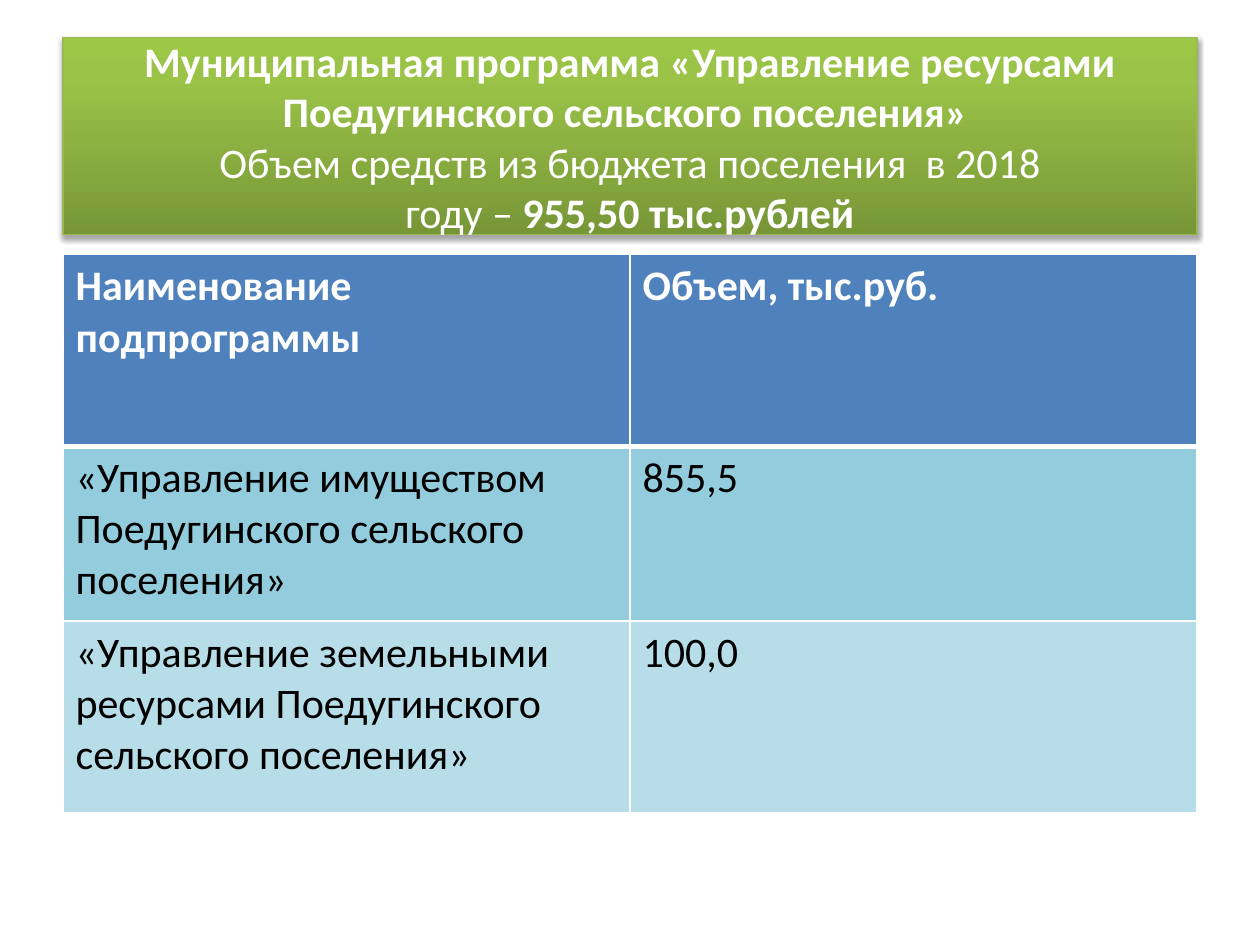
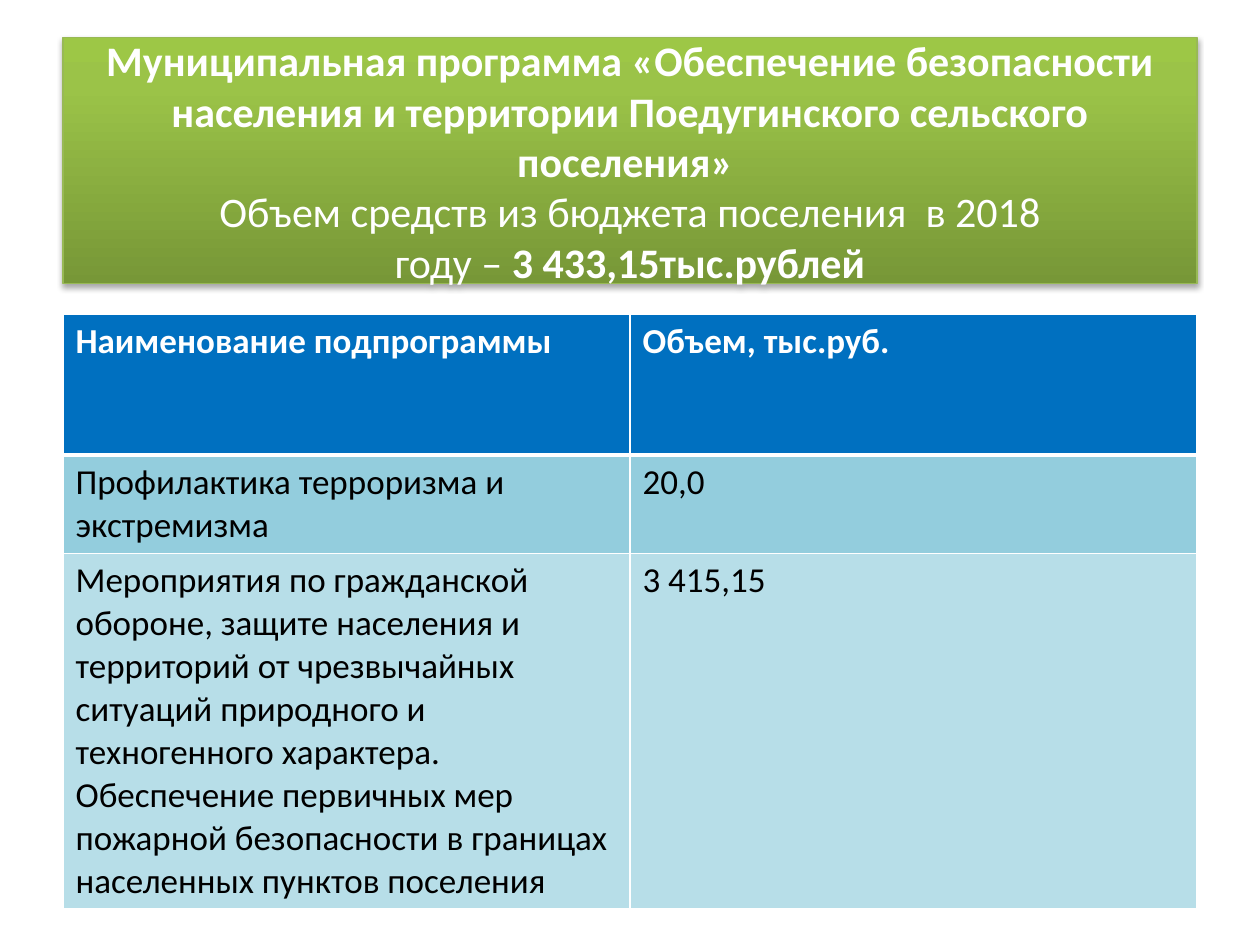
from lxml import etree
from pptx import Presentation
from pptx import util as u
from pptx.dml.color import RGBColor
from pptx.enum import text
from pptx.oxml import ns

COLORS = {
    "white": "FFFFFF", "black": "000000",
    "band_dark": "779737", "band_mid": "9BC348", "band_light": "9DC746",
    "band_edge": "98B955",
    "row_odd": "93CDDD", "row_even": "B7DEE8",
    "head_soft": "4F81BD", "head_strong": "0070C0",
}
FONT = "Calibri"
LEFT, WIDTH, BAND_TOP = 36, 648, 21.6
TITLE_SIZE = 24
BAND_STOPS = [(0, "band_dark"), (80, "band_mid"), (100, "band_light")]
HEADINGS = ("Наименование подпрограммы", "Объем, тыс.руб.")
BUDGET_LINES = ("Объем средств из бюджета поселения  в 2018", "году – ")

PROGRAMMES = [
    {
        "name": "Муниципальная программа «Управление ресурсами "
                "Поедугинского сельского поселения» ",
        "total": "955,50 тыс.рублей",
        "band_height": 112.5, "table_top": 145.5, "size": 24,
        "head": "head_soft", "row_heights": (109.5, 100, 109.5),
        "rows": [
            ("«Управление имуществом Поедугинского сельского поселения»", "855,5"),
            ("«Управление земельными ресурсами Поедугинского сельского поселения»",
             "100,0"),
        ],
    },
    {
        "name": "Муниципальная программа «Обеспечение безопасности населения "
                "и территории Поедугинского сельского поселения» ",
        "total": "3 433,15тыс.рублей",
        "band_height": 140.5, "table_top": 179.5, "size": 20,
        "head": "head_strong", "row_heights": (80.5, 56, 203),
        "rows": [
            ("Профилактика терроризма и экстремизма", "20,0"),
            ("Мероприятия по гражданской обороне, защите населения и территорий "
             "от чрезвычайных ситуаций природного и техногенного характера. "
             "Обеспечение первичных мер пожарной безопасности в границах "
             "населенных пунктов поселения", "3 415,15"),
        ],
    },
]


def add_span(para, words, size, color, bold):
    span = para.add_run()
    span.text = words
    span.font.name = FONT
    span.font.size = u.Pt(size)
    span.font.bold = bold
    span.font.color.rgb = RGBColor.from_string(COLORS[color])


def add_node(parent, tag, **attributes):
    node = etree.SubElement(parent, ns.qn(tag))
    for key, value in attributes.items():
        node.set(key, str(value))
    return node


deck = Presentation()
deck.slide_width, deck.slide_height = u.Pt(720), u.Pt(540)
title_only = deck.slide_layouts[5]

for programme in PROGRAMMES:
    page = deck.slides.add_slide(title_only)

    # Title band
    band = page.shapes.title
    band.left, band.top = u.Pt(LEFT), u.Pt(BAND_TOP)
    band.width, band.height = u.Pt(WIDTH), u.Pt(programme["band_height"])
    band.fill.gradient()
    band.fill.gradient_angle = 90
    stops = band.fill._fill._gradFill.find(ns.qn("a:gsLst"))
    for stop in list(stops):
        stops.remove(stop)
    for position, color in BAND_STOPS:
        stop = add_node(stops, "a:gs", pos=position * 1000)
        add_node(stop, "a:srgbClr", val=COLORS[color])
    band.line.color.rgb = RGBColor.from_string(COLORS["band_edge"])
    band.line.width = u.Pt(0.75)
    effects = add_node(band._element.spPr, "a:effectLst")
    shadow = add_node(effects, "a:outerShdw", blurRad=u.Pt(3.1), dist=u.Pt(1.8),
                      dir=90 * 60000, rotWithShape=0)
    shade = add_node(shadow, "a:srgbClr", val=COLORS["black"])
    add_node(shade, "a:alpha", val=35000)

    frame = band.text_frame
    frame.word_wrap = True
    frame.auto_size = text.MSO_AUTO_SIZE.NONE
    frame.vertical_anchor = text.MSO_ANCHOR.MIDDLE
    para = frame.paragraphs[0]
    para.alignment = text.PP_ALIGN.CENTER
    add_span(para, programme["name"], TITLE_SIZE, "white", True)
    for line in BUDGET_LINES:
        para.add_line_break()
        add_span(para, line, TITLE_SIZE, "white", False)
    add_span(para, programme["total"], TITLE_SIZE, "white", True)

    # Subprogramme table
    heights = programme["row_heights"]
    table = page.shapes.add_table(
        len(heights), len(HEADINGS), u.Pt(LEFT), u.Pt(programme["table_top"]),
        u.Pt(WIDTH), u.Pt(sum(heights))).table
    fills = (programme["head"], "row_odd", "row_even")
    for row, words in enumerate([HEADINGS] + programme["rows"]):
        table.rows[row].height = u.Pt(heights[row])
        is_head = row == 0
        for column, entry in enumerate(words):
            cell = table.cell(row, column)
            add_span(cell.text_frame.paragraphs[0], entry, programme["size"],
                     "white" if is_head else "black", is_head)
            properties = cell._tc.get_or_add_tcPr()
            for side in "LRTB":
                heavy = (side == "B" and is_head) or (side == "T" and row == 1)
                edge = add_node(properties, f"a:ln{side}", w=u.Pt(3 if heavy else 1))
                paint = add_node(edge, "a:solidFill")
                add_node(paint, "a:srgbClr", val=COLORS["white"])
            cell.fill.solid()
            cell.fill.fore_color.rgb = RGBColor.from_string(COLORS[fills[row]])

deck.save("out.pptx")
